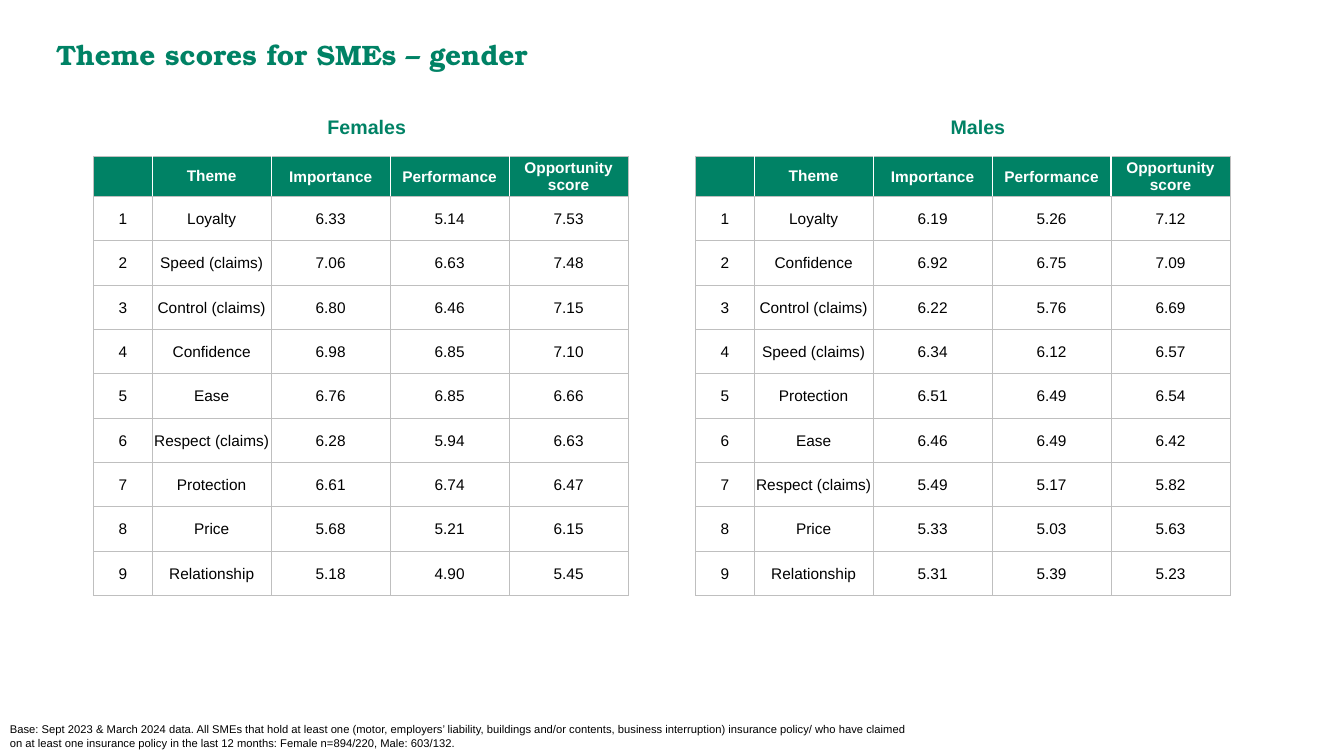
from dataclasses import dataclass

from lxml.etree import SubElement
from pptx import Presentation
from pptx.dml.color import RGBColor
from pptx.enum.text import MSO_ANCHOR, PP_ALIGN
from pptx.oxml.ns import qn
from pptx.util import Inches, Pt


@dataclass(frozen=True)
class Theme:
    green: str = "008265"
    white: str = "FFFFFF"
    black: str = "000000"
    grid: str = "BFBFBF"
    body_font: str = "Arial"
    title_font: str = "TeX Gyre Bonum"
    title_size: int = 20
    group_size: int = 14
    table_size: int = 11
    note_size: int = 8
    grid_width: float = 0.75
    header_divider_width: float = 1


THEME = Theme()
HEADINGS = ("", "Theme", "Importance", "Performance", "Opportunity score")
COLUMN_WIDTHS = (0.58, 1.18, 1.18, 1.18, 1.18)
HEADER_HEIGHT = 0.4
ROW_HEIGHT = 0.44
TABLE_TOP = 1.55

FEMALE_SCORES = (
    ("Loyalty", "6.33", "5.14", "7.53"),
    ("Speed (claims)", "7.06", "6.63", "7.48"),
    ("Control (claims)", "6.80", "6.46", "7.15"),
    ("Confidence", "6.98", "6.85", "7.10"),
    ("Ease", "6.76", "6.85", "6.66"),
    ("Respect (claims)", "6.28", "5.94", "6.63"),
    ("Protection", "6.61", "6.74", "6.47"),
    ("Price", "5.68", "5.21", "6.15"),
    ("Relationship", "5.18", "4.90", "5.45"),
)
MALE_SCORES = (
    ("Loyalty", "6.19", "5.26", "7.12"),
    ("Confidence", "6.92", "6.75", "7.09"),
    ("Control (claims)", "6.22", "5.76", "6.69"),
    ("Speed (claims)", "6.34", "6.12", "6.57"),
    ("Protection", "6.51", "6.49", "6.54"),
    ("Ease", "6.46", "6.49", "6.42"),
    ("Respect (claims)", "5.49", "5.17", "5.82"),
    ("Price", "5.33", "5.03", "5.63"),
    ("Relationship", "5.31", "5.39", "5.23"),
)
BASE_NOTE = (
    "Base: Sept 2023 & March 2024 data. All SMEs that hold at least one (motor, "
    "employers’ liability, buildings and/or contents, business interruption) insurance "
    "policy/ who have claimed on at least one insurance policy in the last 12 months: "
    "Female n=894/220, Male: 603/132."
)


def add_run(paragraph, text, size, color, bold=False, font=THEME.body_font):
    run = paragraph.add_run()
    run.text = text
    run.font.name = font
    run.font.size = Pt(size)
    run.font.bold = bold
    run.font.color.rgb = RGBColor.from_string(color)


def add_label(slide, left, top, width, height, text, size, color, **style):
    label = slide.shapes.add_textbox(
        Inches(left), Inches(top), Inches(width), Inches(height))
    label.text_frame.word_wrap = True
    add_run(label.text_frame.paragraphs[0], text, size, color, **style)


def add_border(cell, side, color, width):
    """Draw one edge of a cell; side is L, R, T or B."""
    edge = SubElement(cell._tc.get_or_add_tcPr(), qn(f"a:ln{side}"), w=str(Pt(width)))
    fill = SubElement(edge, qn("a:solidFill"))
    SubElement(fill, qn("a:srgbClr"), val=color)


def format_cell(cell, text, is_header, column):
    last_column = len(HEADINGS) - 1
    dividers = {"L": column > 0, "R": column < last_column}
    for side in "LRTB":
        if is_header and dividers.get(side):
            add_border(cell, side, THEME.white, THEME.header_divider_width)
        else:
            add_border(cell, side, THEME.grid, THEME.grid_width)

    if is_header:
        cell.fill.solid()
        cell.fill.fore_color.rgb = RGBColor.from_string(THEME.green)
    else:
        cell.fill.background()

    cell.vertical_anchor = MSO_ANCHOR.MIDDLE
    if not is_header or column > 1:
        cell.margin_left = cell.margin_right = cell.margin_top = Inches(0.01)
        cell.margin_bottom = 0
    paragraph = cell.text_frame.paragraphs[0]
    paragraph.alignment = PP_ALIGN.CENTER
    if text:
        color = THEME.white if is_header else THEME.black
        add_run(paragraph, text, THEME.table_size, color, bold=is_header)


def add_score_table(slide, left, scores):
    ranked = [(str(rank), *row) for rank, row in enumerate(scores, start=1)]
    rows = [HEADINGS, *ranked]
    table = slide.shapes.add_table(
        len(rows), len(HEADINGS), Inches(left), Inches(TABLE_TOP),
        Inches(sum(COLUMN_WIDTHS)),
        Inches(HEADER_HEIGHT + ROW_HEIGHT * len(scores))).table
    table.horz_banding = False
    for column, width in zip(table.columns, COLUMN_WIDTHS):
        column.width = Inches(width)
    for row_index, values in enumerate(rows):
        is_header = row_index == 0
        table.rows[row_index].height = Inches(HEADER_HEIGHT if is_header else ROW_HEIGHT)
        for column_index, text in enumerate(values):
            format_cell(table.cell(row_index, column_index), text, is_header, column_index)


def main():
    deck = Presentation()
    deck.slide_width = Inches(13.33)
    deck.slide_height = Inches(7.5)
    slide = deck.slides.add_slide(deck.slide_layouts[6])

    add_label(slide, 0, 7.12, 9.23, 0.38, BASE_NOTE, THEME.note_size, THEME.black)
    add_label(slide, 0.46, 0.32, 12.28, 0.44, "Theme scores for SMEs – gender",
              THEME.title_size, THEME.green, bold=True, font=THEME.title_font)
    for group, label_left, table_left, scores in (
        ("Females", 3.15, 0.93, FEMALE_SCORES),
        ("Males", 9.33, 6.9, MALE_SCORES),
    ):
        add_score_table(slide, table_left, scores)
        add_label(slide, label_left, 1.09, 2.07, 0.34, group,
                  THEME.group_size, THEME.green, bold=True)

    deck.save("out.pptx")


if __name__ == "__main__":
    main()
